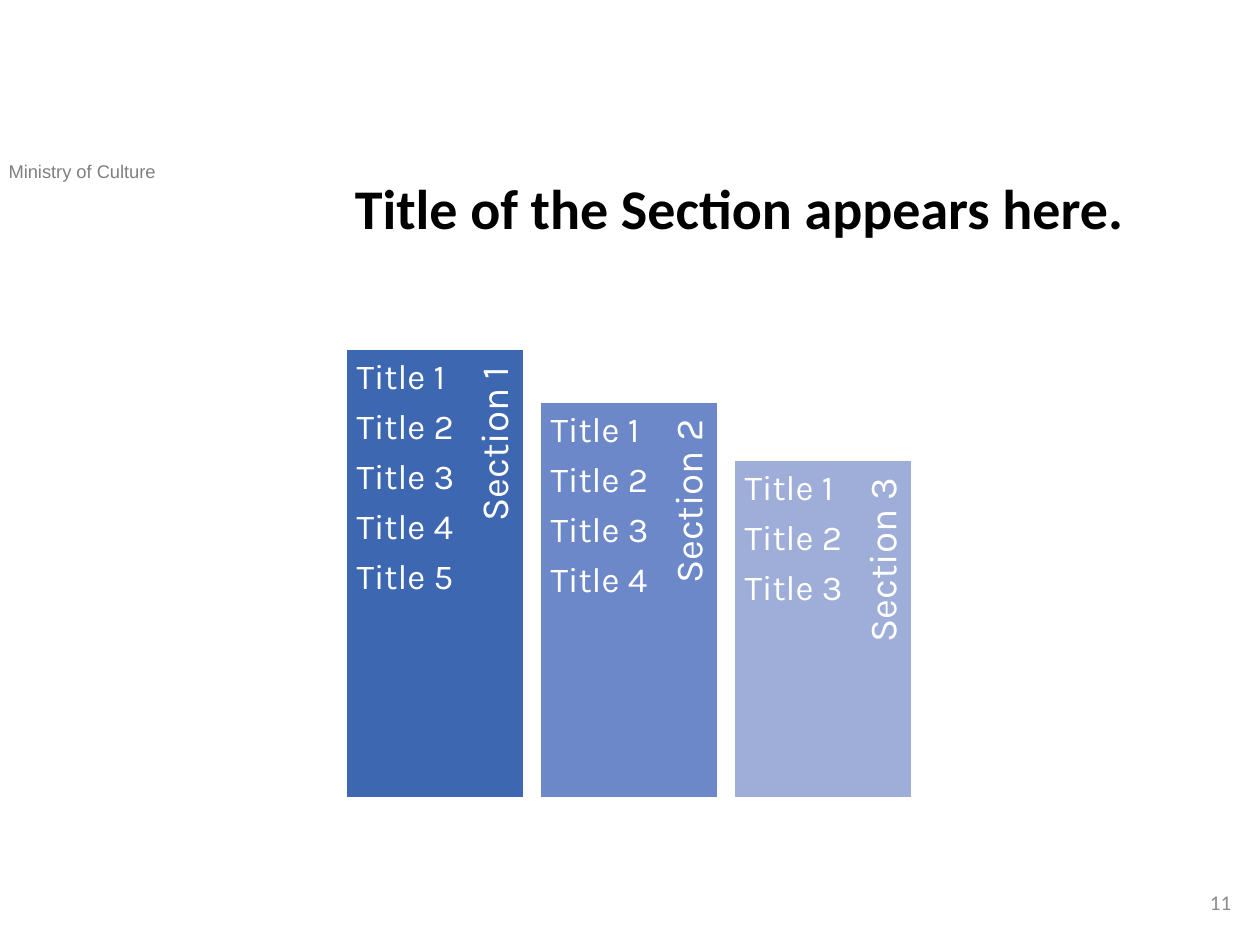
import pptx
import pptx.util
import pptx.dml.color
import pptx.enum.shapes
import pptx.enum.text
from dataclasses import dataclass

Inches, Pt = pptx.util.Inches, pptx.util.Pt
ALIGN = pptx.enum.text.PP_ALIGN
ANCHOR = pptx.enum.text.MSO_ANCHOR


@dataclass(frozen=True)
class Theme:
    heading_font: str = "Calibri"
    section_font: str = "Karla"
    header_font: str = "Arial"
    white: str = "FFFFFF"
    black: str = "000000"
    header: str = "808080"
    number: str = "8C8C8C"
    title_size: float = 32
    label_size: float = 22
    list_size: float = 20
    number_size: float = 12
    header_size: float = 10.5


THEME = Theme()

# Section name, number of titles, top edge, fill
SECTIONS = [
    ("Section 1", 5, 2.77, "3E67B2"),
    ("Section 2", 4, 3.19, "6C88C8"),
    ("Section 3", 3, 3.65, "9FAED8"),
]
FIRST_LEFT, PITCH, BAR_WIDTH, BOTTOM = 2.75, 1.54, 1.41, 6.33
LABEL_HEIGHT, LABEL_CENTRE, LABEL_SHARE = 0.37, 1.2, 0.9
LIST_WIDTH = 1


def rgb(color):
    return pptx.dml.color.RGBColor.from_string(color)


def set_frame(tf, margins=(0.1, 0.05, 0.1, 0.05), anchor=ANCHOR.TOP):
    tf.word_wrap = True
    tf.vertical_anchor = anchor
    tf.margin_left, tf.margin_top, tf.margin_right, tf.margin_bottom = map(Inches, margins)


def write_lines(tf, lines, font, size, color, align=ALIGN.LEFT,
                bold=False, spacing=None, after=0):
    for i, line in enumerate(lines):
        p = tf.paragraphs[0] if i == 0 else tf.add_paragraph()
        p.alignment = align
        p.line_spacing = spacing
        p.space_before, p.space_after = Pt(0), Pt(after)
        r = p.add_run()
        r.text = line
        r.font.name, r.font.size, r.font.bold = font, Pt(size), bold
        r.font.color.rgb = rgb(color)


def add_text(shapes, box, lines, font, size, color, margins=(0.1, 0.05, 0.1, 0.05),
             anchor=ANCHOR.TOP, **style):
    sp = shapes.add_textbox(*map(Inches, box))
    set_frame(sp.text_frame, margins, anchor)
    write_lines(sp.text_frame, lines, font, size, color, **style)
    return sp


def add_title(s, text):
    sp = s.shapes.title
    sp.left, sp.top, sp.width, sp.height = map(Inches, (2.64, 1.39, 6.46, 0.79))
    set_frame(sp.text_frame)
    write_lines(sp.text_frame, [text], THEME.heading_font, THEME.title_size,
                THEME.black, align=ALIGN.CENTER, bold=True, spacing=0.9)


def add_bar(shapes, left, top, height, fill):
    sp = shapes.add_shape(pptx.enum.shapes.MSO_SHAPE.RECTANGLE,
                          *map(Inches, (left, top, BAR_WIDTH, height)))
    sp.shadow.inherit = False
    sp.fill.solid()
    sp.fill.fore_color.rgb = rgb(fill)
    sp.line.color.rgb = rgb(THEME.white)
    sp.line.width = Pt(1)


def add_label(shapes, left, top, height, name):
    # The box is turned about its centre, so its length runs down from the bar's top
    length = height * LABEL_SHARE
    box = (left + LABEL_CENTRE - length / 2, top + (length - LABEL_HEIGHT) / 2,
           length, LABEL_HEIGHT)
    sp = add_text(shapes, box, [name], THEME.section_font, THEME.label_size,
                  THEME.white, margins=(0.09, 0, 0.14, 0.03), anchor=ANCHOR.MIDDLE,
                  align=ALIGN.RIGHT, spacing=0.9)
    sp.rotation = 270


def add_section(shapes, index, name, count, top, fill):
    left, height = FIRST_LEFT + index * PITCH, BOTTOM - top
    add_bar(shapes, left, top, height, fill)
    add_label(shapes, left, top, height, name)
    titles = [f"Title {n}" for n in range(1, count + 1)]
    add_text(shapes, (left, top, LIST_WIDTH, height), titles, THEME.section_font,
             THEME.list_size, THEME.white, margins=(0.08,) * 4, spacing=0.9, after=7)


def main():
    prs = pptx.Presentation()
    prs.slide_width, prs.slide_height = Inches(10), Inches(7.5)
    s = prs.slides.add_slide(prs.slide_layouts[5])

    # Header, title and page number
    add_text(s.shapes, (-0.03, 1.22, 2.18, 0.28), ["Ministry of Culture"],
             THEME.header_font, THEME.header_size, THEME.header)
    add_title(s, "Title of the Section appears here.")
    add_text(s.shapes, (7.62, 6.96, 2.25, 0.4), ["11"], THEME.heading_font,
             THEME.number_size, THEME.number, anchor=ANCHOR.MIDDLE, align=ALIGN.RIGHT)

    # Descending section bars
    group = s.shapes.add_group_shape()
    for index, section in enumerate(SECTIONS):
        add_section(group.shapes, index, *section)

    prs.save("out.pptx")


if __name__ == "__main__":
    main()
